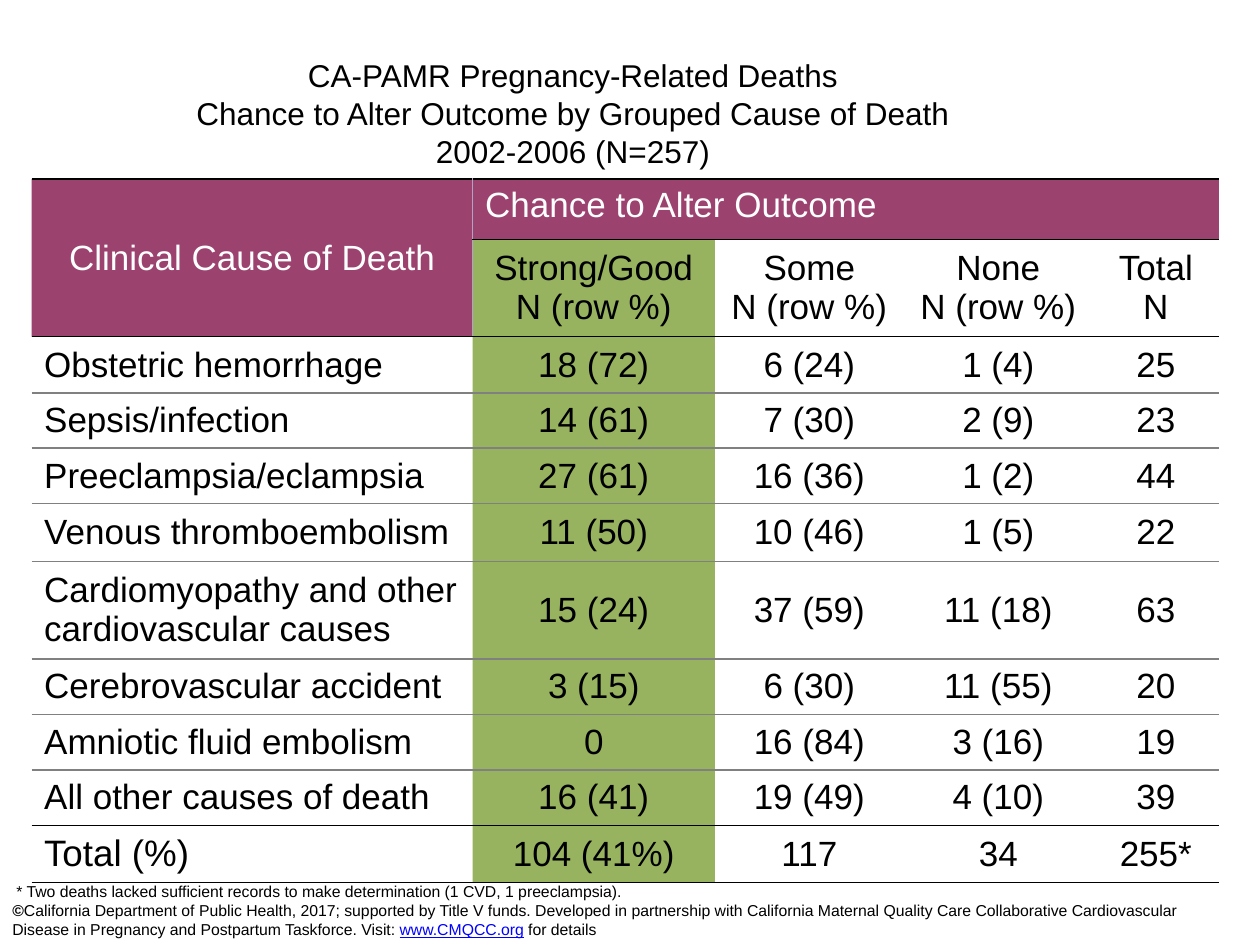
import pptx
import pptx.util
import pptx.dml.color
import pptx.enum.text
import pptx.oxml
import pptx.oxml.ns
from pptx.util import Cm

RGB = pptx.dml.color.RGBColor
BLACK = RGB(0x00, 0x00, 0x00)
WHITE = RGB(0xFF, 0xFF, 0xFF)
GREY = RGB(0x80, 0x80, 0x80)
LILAC = RGB(0xB3, 0xA2, 0xC7)
PLUM = RGB(0x8B, 0x21, 0x56)
GREEN = RGB(0x86, 0xA6, 0x44)
BLUE = RGB(0x00, 0x00, 0xFF)

ALIGN = pptx.enum.text.PP_ALIGN
MIDDLE = pptx.enum.text.MSO_ANCHOR.MIDDLE
TOP = pptx.enum.text.MSO_ANCHOR.TOP

TITLE = ("CA-PAMR Pregnancy-Related Deaths\v"
         "Chance to Alter Outcome by Grouped Cause of Death\v"
         "2002-2006 (N=257)")
NOTE = ("* Two deaths lacked sufficient records to make determination "
        "(1 CVD, 1 preeclampsia). ")
CREDIT = [
    ("©", BLACK),
    ("California Department of Public Health, 2017; supported by Title V "
     "funds. Developed in partnership with California Maternal Quality Care "
     "Collaborative Cardiovascular Disease in Pregnancy and Postpartum "
     "Taskforce. Visit: ", BLACK),
    ("www.CMQCC.org", BLUE),
    (" for details", BLACK),
]

ROWS = [
    ["Clinical Cause of Death", "Chance to Alter Outcome  ", "", "", ""],
    ["", "Strong/Good\nN (row %)", "Some\nN (row %)", "None\nN (row %)",
     "Total N"],
    ["Obstetric hemorrhage", "18 (72)", "6 (24)", "1 (4)", "25"],
    ["Sepsis/infection", "14 (61)", "7 (30)", "2 (9)", "23"],
    ["Preeclampsia/eclampsia", "27 (61)", "16 (36)", "1 (2)", "44"],
    ["Venous thromboembolism", "11 (50)", "10 (46)", "1 (5)", "22"],
    ["Cardiomyopathy and other cardiovascular causes", "15 (24)", "37 (59)",
     "11 (18)", "63"],
    ["Cerebrovascular accident", "3 (15)", "6 (30)", "11 (55)", "20"],
    ["Amniotic fluid embolism", "0", "16 (84)", "3 (16)", "19"],
    ["All other causes of death", "16 (41)", "19 (49)", "4 (10)", "39"],
    ["Total (%)", "104 (41%)", "117", "34", "255*"],
]
WIDTHS = [8.89, 4.88, 3.81, 3.81, 2.54]
HEIGHTS = [1.22, 1.93, 1.14, 1.09, 1.12, 1.17, 1.96, 1.12, 1.12, 1.12, 1.14]
HEADS = 2
LAST = len(ROWS) - 1


def style(font, size, color):
    font.name = "Arial"
    font.size = pptx.util.Pt(size)
    font.color.rgb = color


def add_box(slide, left, top, width, height, wrap=True):
    box = slide.shapes.add_textbox(Cm(left), Cm(top), Cm(width), Cm(height))
    box.text_frame.word_wrap = wrap
    return box.text_frame


def add_text(frame, text, size):
    """Fill a frame with one centred black paragraph."""
    frame.text = text
    para = frame.paragraphs[0]
    para.alignment = ALIGN.CENTER
    for run in para.runs:
        style(run.font, size, BLACK)


def add_credit(slide):
    frame = add_box(slide, 0, 18.03, 25.02, 1.02)
    for text, color in CREDIT:
        run = frame.paragraphs[0].add_run()
        run.text = text
        style(run.font, 9, color)
        run.font.bold = text == "©"
        run.font.underline = color == BLUE


def paint(cell, color):
    """Fill a cell at 85 % opacity, or leave it clear."""
    if color is None:
        cell.fill.background()
        return
    cell.fill.solid()
    cell.fill.fore_color.rgb = color
    tone = cell.fill._xPr.find(".//" + pptx.oxml.ns.qn("a:srgbClr"))
    tone.append(pptx.oxml.parse_xml(
        f'<a:alpha {pptx.oxml.ns.nsdecls("a")} val="85000"/>'))


def set_edges(cell, colors):
    """Draw the left, right, top and bottom edges; None means no line."""
    props = cell._tc.get_or_add_tcPr()
    for spot, (side, color) in enumerate(zip("LRTB", colors)):
        ink = "<a:noFill/>"
        if color is not None:
            ink = f'<a:solidFill><a:srgbClr val="{color}"/></a:solidFill>'
        props.insert(spot, pptx.oxml.parse_xml(
            f'<a:ln{side} {pptx.oxml.ns.nsdecls("a")} w="12700">'
            f'{ink}</a:ln{side}>'))


def rule(line):
    """Colour of a horizontal rule, counted from the table top."""
    return BLACK if line <= HEADS or line >= LAST else GREY


def fill_cell(cell, row, col, text):
    head = row == 0 or (row < HEADS and col == 0)
    data = row >= HEADS and col > 0
    cell.text = text
    cell.vertical_anchor = TOP if row == 0 and col > 0 else MIDDLE
    cell.margin_left = cell.margin_right = Cm(0.2 if data else 0.25)
    cell.margin_top = cell.margin_bottom = Cm(0.03 if data else 0.13)
    left = (row >= HEADS and col == 0) or (row == 0 and col > 0)
    for para in cell.text_frame.paragraphs:
        para.alignment = ALIGN.LEFT if left else ALIGN.CENTER
        size = 21 if row == LAST and col == 0 else 20
        style(para.font, size, WHITE if head else BLACK)
        for run in para.runs:
            style(run.font, size, WHITE if head else BLACK)
    paint(cell, PLUM if head else GREEN if col == 1 else None)
    split = LILAC if row < HEADS else None
    set_edges(cell, (split if col == 1 else None,
                     split if col == 0 else None,
                     None if (row, col) == (1, 0) else rule(row),
                     rule(row + 1)))


def add_grid(slide):
    grid = slide.shapes.add_table(
        len(ROWS), len(WIDTHS), Cm(0.64), Cm(3.61),
        Cm(sum(WIDTHS)), Cm(sum(HEIGHTS))).table
    grid.first_row = grid.horz_banding = False
    for col, width in zip(grid.columns, WIDTHS):
        col.width = Cm(width)
    for row, height in zip(grid.rows, HEIGHTS):
        row.height = Cm(height)
    for row, texts in enumerate(ROWS):
        for col, text in enumerate(texts):
            fill_cell(grid.cell(row, col), row, col, text)
    grid.cell(0, 0).merge(grid.cell(1, 0))
    grid.cell(0, 1).merge(grid.cell(0, 4))


def main():
    deck = pptx.Presentation()
    deck.slide_width, deck.slide_height = Cm(25.4), Cm(19.05)
    slide = deck.slides.add_slide(deck.slide_layouts[6])
    add_credit(slide)
    title = add_box(slide, 2.34, 1.07, 18.42, 2.41)
    title.vertical_anchor = MIDDLE
    add_text(title, TITLE, 18)
    add_grid(slide)
    add_text(add_box(slide, 0, 17.65, 12.95, 0.64, False), NOTE, 9)
    deck.save("out.pptx")


if __name__ == "__main__":
    main()
